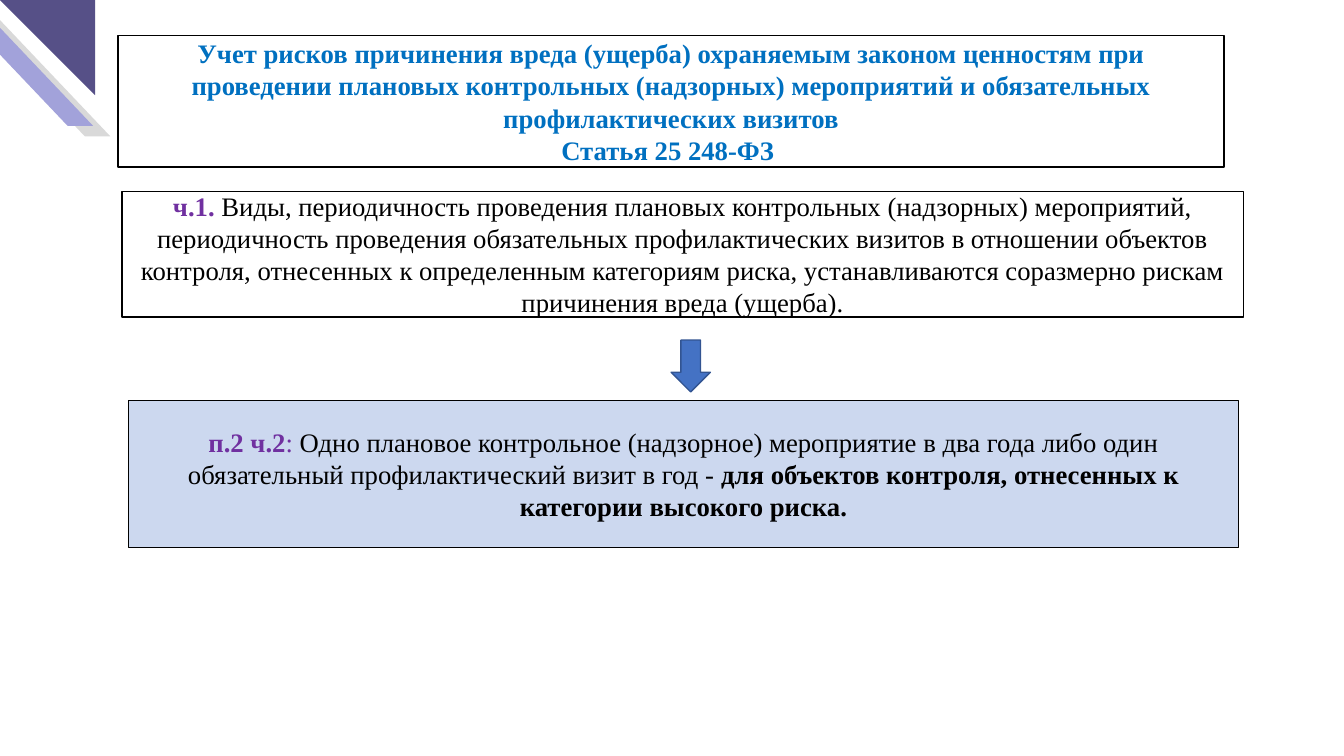
from lxml import etree
from pptx import Presentation
from pptx.dml.color import RGBColor
from pptx.enum.shapes import MSO_SHAPE
from pptx.enum.text import MSO_ANCHOR, PP_ALIGN
from pptx.oxml.ns import qn
from pptx.util import Inches, Pt

RECTANGLE = MSO_SHAPE.RECTANGLE
PARALLELOGRAM = MSO_SHAPE.PARALLELOGRAM
TRIANGLE = MSO_SHAPE.RIGHT_TRIANGLE
DOWN_ARROW = MSO_SHAPE.DOWN_ARROW
MIDDLE = MSO_ANCHOR.MIDDLE
CENTER = PP_ALIGN.CENTER

WHITE, BLACK, BLUE, PURPLE = "FFFFFF", "000000", "0070C0", "7030A0"
FONT, SIZE = "Times New Roman", 20

STRIPES = [(-0.36, 0.11, "D9D9D9"), (-0.54, 0, "A2A2DA")]
STRIPE_SIZE = (1.51, 1.31)
STRIPE_SLANT = 0.95
CORNER = (0, 0, 0.99, 0.99)
ARROW = (6.99, 3.54, 0.41, 0.54)

PANELS = [
    {"area": (1.23, 0.37, 11.52, 1.37), "fill": WHITE, "opacity": 100, "text": [
        [("Учет рисков причинения вреда (ущерба) охраняемым законом ценностям при "
          "проведении плановых контрольных (надзорных) мероприятий и обязательных "
          "профилактических визитов", BLUE, True)],
        [("Статья 25 248-ФЗ ", BLUE, True)],
    ]},
    {"area": (1.27, 1.99, 11.68, 1.31), "fill": WHITE, "opacity": 100, "text": [
        [("ч.1. ", PURPLE, True),
         ("Виды, периодичность проведения плановых контрольных (надзорных) мероприятий, "
          "периодичность проведения обязательных профилактических визитов в отношении "
          "объектов контроля, отнесенных к определенным категориям риска, устанавливаются "
          "соразмерно рискам причинения вреда (ущерба).", BLACK, False)],
    ]},
    {"area": (1.34, 4.17, 11.56, 1.53), "fill": "8FAADC", "opacity": 45, "text": [
        [("п.2 ч.2", PURPLE, True),
         (": ", PURPLE, False),
         ("Одно плановое контрольное (надзорное) мероприятие в два года либо один "
          "обязательный профилактический визит в год - ", BLACK, False),
         ("для объектов контроля, отнесенных к категории высокого риска.", BLACK, True)],
    ]},
]


def color(value):
    return RGBColor.from_string(value)


def add_figure(page, kind, area, fill, line=None):
    figure = page.shapes.add_shape(kind, *(Inches(length) for length in area))
    figure.shadow.inherit = False
    figure.fill.solid()
    figure.fill.fore_color.rgb = color(fill)
    if line:
        figure.line.color.rgb = color(line)
        figure.line.width = Pt(1)
    else:
        figure.line.fill.background()
    return figure


def set_opacity(figure, percent):
    tint = figure._element.spPr.find(qn("a:solidFill")).find(qn("a:srgbClr"))
    etree.SubElement(tint, qn("a:alpha")).set("val", str(percent * 1000))


def write_text(box, paragraphs):
    frame = box.text_frame
    frame.word_wrap = True
    frame.vertical_anchor = MIDDLE
    for index, spans in enumerate(paragraphs):
        para = frame.add_paragraph() if index else frame.paragraphs[0]
        para.alignment = CENTER
        para.font.name = FONT
        para.font.size = Pt(SIZE)
        for words, ink, bold in spans:
            span = para.add_run()
            span.text = words
            span.font.name = FONT
            span.font.size = Pt(SIZE)
            span.font.bold = bold
            span.font.color.rgb = color(ink)


def main():
    deck = Presentation()
    deck.slide_width, deck.slide_height = Inches(14), Inches(7.87)
    page = deck.slides.add_slide(deck.slide_layouts[6])

    for left, top, fill in STRIPES:
        stripe = add_figure(page, PARALLELOGRAM, (left, top, *STRIPE_SIZE), fill)
        stripe.adjustments[0] = STRIPE_SLANT
        stripe._element.spPr.find(qn("a:xfrm")).set("flipH", "1")
    add_figure(page, TRIANGLE, CORNER, "565087").rotation = 180

    for panel in PANELS:
        box = add_figure(page, RECTANGLE, panel["area"], panel["fill"], BLACK)
        if panel["opacity"] < 100:
            set_opacity(box, panel["opacity"])
        write_text(box, panel["text"])
    add_figure(page, DOWN_ARROW, ARROW, "4472C4", "325491")

    deck.save("out.pptx")


if __name__ == "__main__":
    main()
